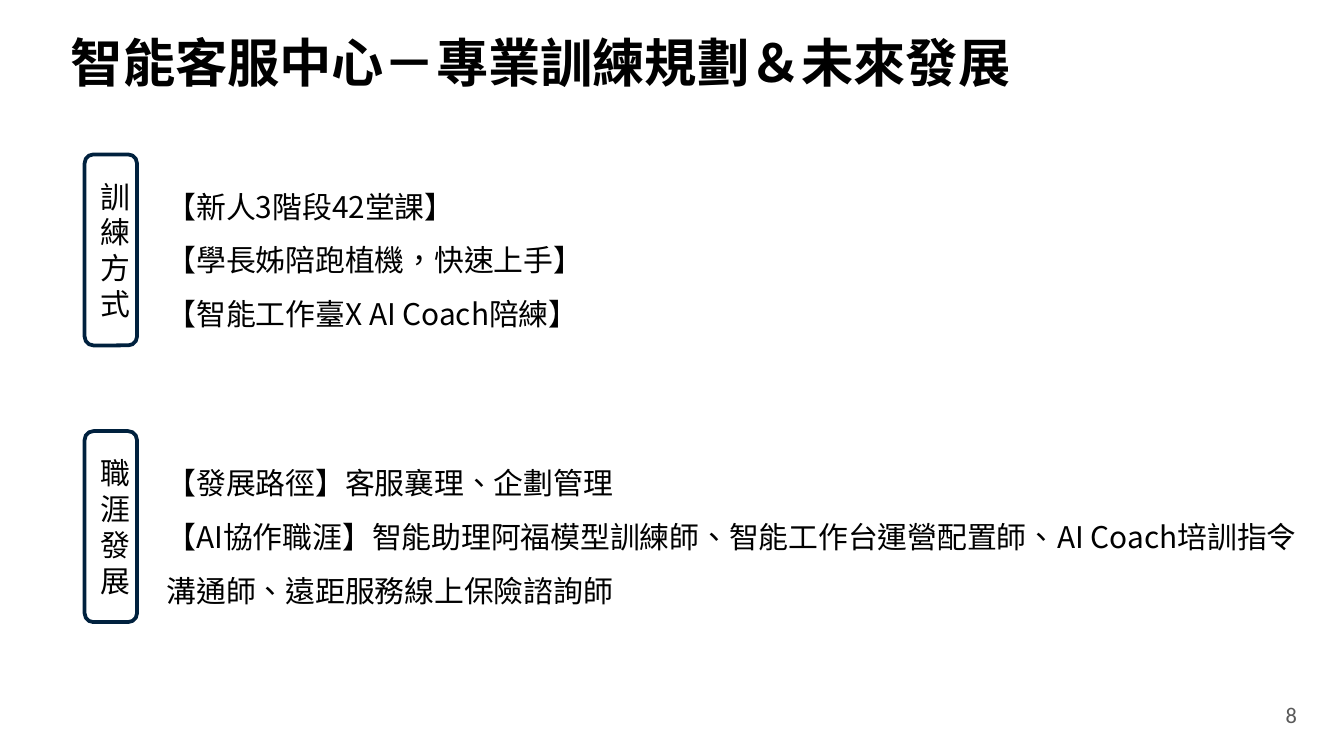
from dataclasses import dataclass

from pptx import Presentation
from pptx.dml.color import RGBColor
from pptx.enum.shapes import MSO_SHAPE
from pptx.enum.text import MSO_ANCHOR, PP_ALIGN
from pptx.oxml.ns import qn
from pptx.util import Cm, Pt

BODY_FONT = "Noto Sans CJK SC"
HEAD_FONT = "Calibri"


@dataclass
class Section:
    top: float
    width: float
    label: str
    lines: list[str]


SECTIONS = [
    Section(2.92, 21.18, "訓練方式", [
        "【新人3階段42堂課】",
        "【學長姊陪跑植機，快速上手】",
        "【智能工作臺X AI Coach陪練】",
    ]),
    Section(8.15, 22.3, "職涯發展", [
        "【發展路徑】客服襄理、企劃管理",
        "【AI協作職涯】智能助理阿福模型訓練師、智能工作台運營配置師、"
        "AI Coach培訓指令溝通師、遠距服務線上保險諮詢師",
    ]),
]


def color(value: str) -> RGBColor:
    return RGBColor.from_string(value)


def add_run(p, text: str, size: float, font: str = BODY_FONT,
            ink: str = "000000", bold: bool = False) -> None:
    r = p.add_run()
    r.text = text
    r.font.size = Pt(size)
    r.font.name = font
    r.font.bold = bold
    r.font.color.rgb = color(ink)
    props = r._r.get_or_add_rPr()
    props.set("lang", "zh-TW")
    ea = props.makeelement(qn("a:ea"), {"typeface": BODY_FONT})
    props.find(qn("a:latin")).addnext(ea)


def add_box(s, left: float, top: float, width: float, height: float,
            anchor=MSO_ANCHOR.MIDDLE):
    tf = s.shapes.add_textbox(Cm(left), Cm(top), Cm(width), Cm(height)).text_frame
    tf.word_wrap = True
    tf.vertical_anchor = anchor
    return tf


def add_label(s, top: float, text: str) -> None:
    sp = s.shapes.add_shape(MSO_SHAPE.ROUNDED_RECTANGLE,
                            Cm(1.6), Cm(top), Cm(0.99), Cm(3.61))
    sp.shadow.inherit = False
    sp.fill.solid()
    sp.fill.fore_color.rgb = color("FFFFFF")
    sp.line.color.rgb = color("00213E")
    sp.line.width = Pt(2)
    tf = sp.text_frame
    tf.word_wrap = True
    tf.vertical_anchor = MSO_ANCHOR.MIDDLE
    p = tf.paragraphs[0]
    p.alignment = PP_ALIGN.CENTER
    add_run(p, text, 16)


def add_section(s, section: Section) -> None:
    add_label(s, section.top, section.label)
    tf = add_box(s, 2.9, section.top + 0.18, section.width, 3.2, MSO_ANCHOR.TOP)
    for i, line in enumerate(section.lines):
        p = tf.add_paragraph() if i else tf.paragraphs[0]
        p.line_spacing = 1.5
        add_run(p, line, 16)


def main() -> None:
    prs = Presentation()
    prs.slide_width, prs.slide_height = Cm(25.4), Cm(14.29)
    s = prs.slides.add_slide(prs.slide_layouts[6])

    title = add_box(s, 1.09, 0.58, 23.19, 1.17)
    add_run(title.paragraphs[0], "智能客服中心－專業訓練規劃＆未來發展", 28, HEAD_FONT, bold=True)
    number = add_box(s, 24.05, 13.11, 1.35, 0.79)
    add_run(number.paragraphs[0], "8", 12, HEAD_FONT, "595959")

    for section in SECTIONS:
        add_section(s, section)
    prs.save("out.pptx")


if __name__ == "__main__":
    main()
